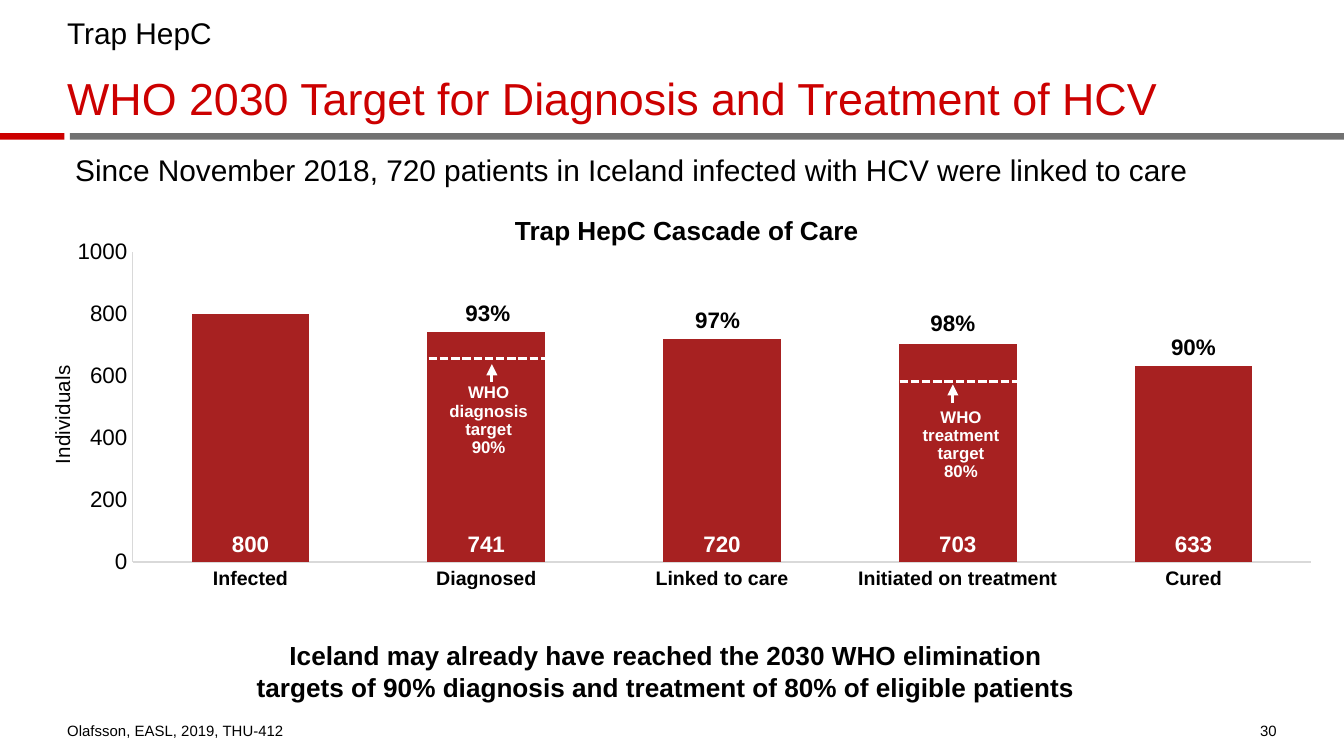
import pptx
import pptx.util
import pptx.chart.data
import pptx.dml.color
import pptx.enum.chart
import pptx.enum.dml
import pptx.enum.shapes
import pptx.enum.text
import pptx.oxml
import pptx.oxml.ns

PX = 9144  # 100 px to the inch
BLACK = pptx.dml.color.RGBColor(0, 0, 0)
WHITE = pptx.dml.color.RGBColor(255, 255, 255)
RED = pptx.dml.color.RGBColor(0xCC, 0, 0)
GRAY = pptx.dml.color.RGBColor(0x71, 0x71, 0x71)
BAR = pptx.dml.color.RGBColor(0xA7, 0x21, 0x21)
AXIS = pptx.dml.color.RGBColor(0xD9, 0xD9, 0xD9)
LEFT, CENTER, RIGHT = (pptx.enum.text.PP_ALIGN.LEFT, pptx.enum.text.PP_ALIGN.CENTER,
                       pptx.enum.text.PP_ALIGN.RIGHT)
TOP, BOTTOM = pptx.enum.text.MSO_ANCHOR.TOP, pptx.enum.text.MSO_ANCHOR.BOTTOM

prs = pptx.Presentation()
prs.slide_width = 1000 * PX
prs.slide_height = prs.slide_width * 9 // 16
s = prs.slides.add_slide(prs.slide_layouts[6])


def set_font(font, size, color, bold=False):
    font.name, font.size, font.bold = "Arial", pptx.util.Pt(size), bold
    font.color.rgb = color


def add_text(box, lines, size, color=BLACK, bold=False, align=LEFT, anchor=TOP, spacing=0.9):
    tf = s.shapes.add_textbox(*[v * PX for v in box]).text_frame
    tf.word_wrap = True
    tf.margin_left = tf.margin_top = tf.margin_right = tf.margin_bottom = 0
    tf.vertical_anchor = anchor
    for i, line in enumerate(lines):
        p = tf.add_paragraph() if i else tf.paragraphs[0]
        p.alignment, p.line_spacing = align, spacing
        r = p.add_run()
        r.text = line
        set_font(r.font, size, color, bold)


# Two-colour rule under the title
for x, w, color in [(52, 948, GRAY), (0, 48, RED)]:
    sp = s.shapes.add_shape(pptx.enum.shapes.MSO_SHAPE.RECTANGLE, x * PX, 99 * PX, w * PX, 5 * PX)
    sp.shadow.inherit = False
    sp.fill.solid()
    sp.fill.fore_color.rgb = color
    sp.line.fill.background()

# Cascade chart
data = pptx.chart.data.CategoryChartData()
data.categories = ["Infected", "Diagnosed", "Linked to care", "Initiated on treatment", "Cured"]
data.add_series("Series 1", [800, 741, 720, 703, 633])
chart = s.shapes.add_chart(pptx.enum.chart.XL_CHART_TYPE.COLUMN_CLUSTERED,
                           33 * PX, 168 * PX, 967 * PX, 294 * PX, data).chart
set_font(chart.font, 10, BLACK)
chart.has_legend = False
chart.has_title = False
plot = chart.plots[0]
plot.gap_width, plot.overlap, plot.vary_by_categories = 100, -27, False
fill = plot.series[0].format.fill
fill.solid()
fill.fore_color.rgb = BAR
plot.has_data_labels = True
labels = plot.data_labels
labels.show_value = True
labels.position = pptx.enum.chart.XL_LABEL_POSITION.INSIDE_BASE
set_font(labels.font, 12, WHITE, True)

# Chart axes
for axis, size, bold in [(chart.category_axis, 10.5, True), (chart.value_axis, 12, False)]:
    axis.has_major_gridlines = False
    axis.major_tick_mark = axis.minor_tick_mark = pptx.enum.chart.XL_TICK_MARK.NONE
    axis.format.line.color.rgb = AXIS
    axis.format.line.width = pptx.util.Pt(0.75)
    set_font(axis.tick_labels.font, size, BLACK, bold)
axis = chart.value_axis
axis.minimum_scale, axis.maximum_scale, axis.major_unit = 0, 1000, 200
r = axis.axis_title.text_frame.paragraphs[0].add_run()
r.text = "Individuals"
set_font(r.font, 11, BLACK)

# Fixed inner plot area
area = plot._element.getparent()
for old in area.findall(pptx.oxml.ns.qn("c:layout")):
    area.remove(old)
area.insert(0, pptx.oxml.parse_xml(
    "<c:layout %s><c:manualLayout><c:layoutTarget val='inner'/>"
    "<c:xMode val='edge'/><c:yMode val='edge'/><c:x val='0.068'/><c:y val='0.066'/>"
    "<c:w val='0.907'/><c:h val='0.785'/></c:manualLayout></c:layout>"
    % pptx.oxml.ns.nsdecls("c")))

# Headings, conclusion and footer
add_text((50, 13, 900, 25), ["Trap HepC"], 16, anchor=BOTTOM)
add_text((50, 38, 934, 55), ["WHO 2030 Target for Diagnosis and Treatment of HCV"], 24, RED,
         anchor=BOTTOM)
add_text((56, 116, 917, 26),
         ["Since November 2018, 720 patients in Iceland infected with HCV were linked to care"], 16)
add_text((350, 162, 322, 22), ["Trap HepC Cascade of Care"], 14, bold=True, align=CENTER)
add_text((41, 476, 909, 48),
         ["Iceland may already have reached the 2030 WHO elimination",
          "targets of 90% diagnosis and treatment of 80% of eligible patients"],
         14, bold=True, align=CENTER, spacing=1.0)
add_text((50, 544, 459, 6), ["Olafsson, EASL, 2019, THU-412"], 8, anchor=BOTTOM, spacing=1.0)
add_text((923, 536, 27, 14), ["30"], 8, align=RIGHT, anchor=BOTTOM, spacing=1.0)

# Percentages above the bars
for x, y, label in [(335, 225, "93%"), (506, 230, "97%"), (681, 232, "98%"), (860, 250, "90%")]:
    add_text((x, y, 56, 18), [label], 12, bold=True, align=CENTER)

# WHO target notes
add_text((319, 286, 89, 55), ["WHO diagnosis", "target", "90%"], 9, WHITE, True, CENTER)
add_text((673, 304, 84, 55), ["WHO treatment target", "80%"], 9, WHITE, True, CENTER)

# Dashed target lines and the arrows pointing up to them
for x1, y1, x2, y2, dashed in [(319, 267, 407, 267, True), (366, 284, 366, 271, False),
                               (661, 284, 757, 284, True), (709, 300, 709, 286, False)]:
    sp = s.shapes.add_connector(pptx.enum.shapes.MSO_CONNECTOR.STRAIGHT,
                                x1 * PX, y1 * PX, x2 * PX, y2 * PX)
    sp.line.color.rgb = WHITE
    sp.line.width = pptx.util.Pt(1.5)
    if dashed:
        sp.line.dash_style = pptx.enum.dml.MSO_LINE.SQUARE_DOT
    else:
        sp.line._get_or_add_ln().append(pptx.oxml.parse_xml(
            "<a:tailEnd %s type='triangle'/>" % pptx.oxml.ns.nsdecls("a")))
    sp._element.spPr.append(pptx.oxml.parse_xml(
        "<a:effectLst %s/>" % pptx.oxml.ns.nsdecls("a")))

prs.save("out.pptx")
